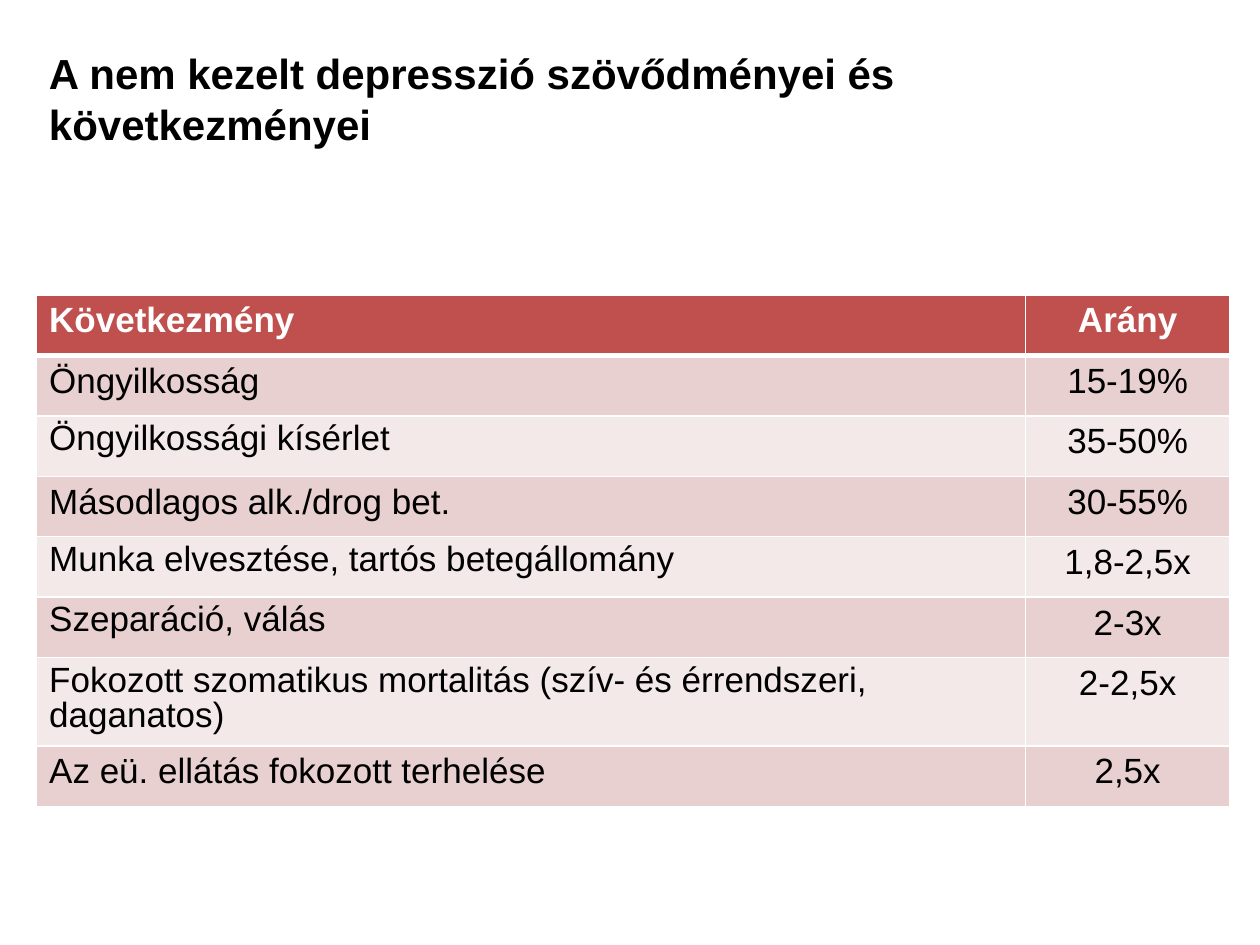
import pptx
import pptx.dml.color
import pptx.enum.text
import pptx.oxml.ns
import pptx.util
from lxml import etree

Inches = pptx.util.Inches
ALIGN = pptx.enum.text.PP_ALIGN

ROWS = [
    # consequence, rate, line spacing of the consequence
    ("Következmény", "Arány", None),
    ("Öngyilkosság", "15-19%", None),
    ("Öngyilkossági kísérlet", "35-50%", 0.9),
    ("Másodlagos alk./drog bet.", "30-55%", None),
    ("Munka elvesztése, tartós betegállomány", "1,8-2,5x", 0.9),
    ("Szeparáció, válás", "2-3x", 0.9),
    ("Fokozott szomatikus mortalitás (szív- és érrendszeri, daganatos)", "2-2,5x", 0.9),
    ("Az eü. ellátás fokozott terhelése", "2,5x", None),
]


def color(value):
    return pptx.dml.color.RGBColor.from_string(value)


def write_text(frame, text, size=20, ink="000000", bold=False,
               align=ALIGN.LEFT, line_spacing=None):
    paragraph = frame.paragraphs[0]
    paragraph.alignment = align
    if line_spacing:
        paragraph.line_spacing = line_spacing
    run = paragraph.add_run()
    run.text = text
    run.font.name = "Arial"
    run.font.size = pptx.util.Pt(size)
    run.font.bold = bold
    run.font.color.rgb = color(ink)


def set_borders(cell, value, bottom_width):
    properties = cell._tc.get_or_add_tcPr()
    qualified = pptx.oxml.ns.qn
    for side in ("lnL", "lnR", "lnT", "lnB"):
        width = bottom_width if side == "lnB" else 1
        line = etree.SubElement(properties, qualified("a:" + side),
                                w=str(pptx.util.Pt(width)))
        fill = etree.SubElement(line, qualified("a:solidFill"))
        etree.SubElement(fill, qualified("a:srgbClr"), val=value)


class SlideBuilder:
    header_fill = "C0504D"
    band_fills = ("F4E9E9", "E8D0D0")
    white = "FFFFFF"

    def __init__(self, slide):
        self.slide = slide

    def title(self, text, left, top, width, height):
        shape = self.slide.shapes.add_textbox(
            Inches(left), Inches(top), Inches(width), Inches(height))
        frame = shape.text_frame
        frame.word_wrap = True
        frame.margin_top = Inches(0.09)
        write_text(frame, text, size=24, bold=True)

    def table(self, rows, left, top, widths, row_height):
        table = self.slide.shapes.add_table(
            len(rows), len(widths), Inches(left), Inches(top),
            Inches(sum(widths)), Inches(row_height * len(rows))).table
        for column, width in zip(table.columns, widths):
            column.width = Inches(width)
        for index, (consequence, rate, spacing) in enumerate(rows):
            table.rows[index].height = Inches(row_height)
            self.cell(table.cell(index, 0), index, consequence, line_spacing=spacing)
            self.cell(table.cell(index, 1), index, rate, align=ALIGN.CENTER)

    def cell(self, cell, row, text, **text_format):
        header = row == 0
        set_borders(cell, self.white, 3 if header else 1)
        cell.fill.solid()
        cell.fill.fore_color.rgb = color(
            self.header_fill if header else self.band_fills[row % 2])
        write_text(cell.text_frame, text, bold=header,
                   ink=self.white if header else "000000", **text_format)


def main():
    presentation = pptx.Presentation()
    presentation.slide_width = Inches(10)
    presentation.slide_height = Inches(7.5)
    builder = SlideBuilder(presentation.slides.add_slide(presentation.slide_layouts[6]))

    # Title
    builder.title("A nem kezelt depresszió szövődményei és következményei",
                  0.29, 0.29, 9.21, 1.19)

    # Consequences and their rates
    builder.table(ROWS, 0.29, 2.34, (7.85, 1.62), 0.48)

    presentation.save("out.pptx")


if __name__ == "__main__":
    main()
